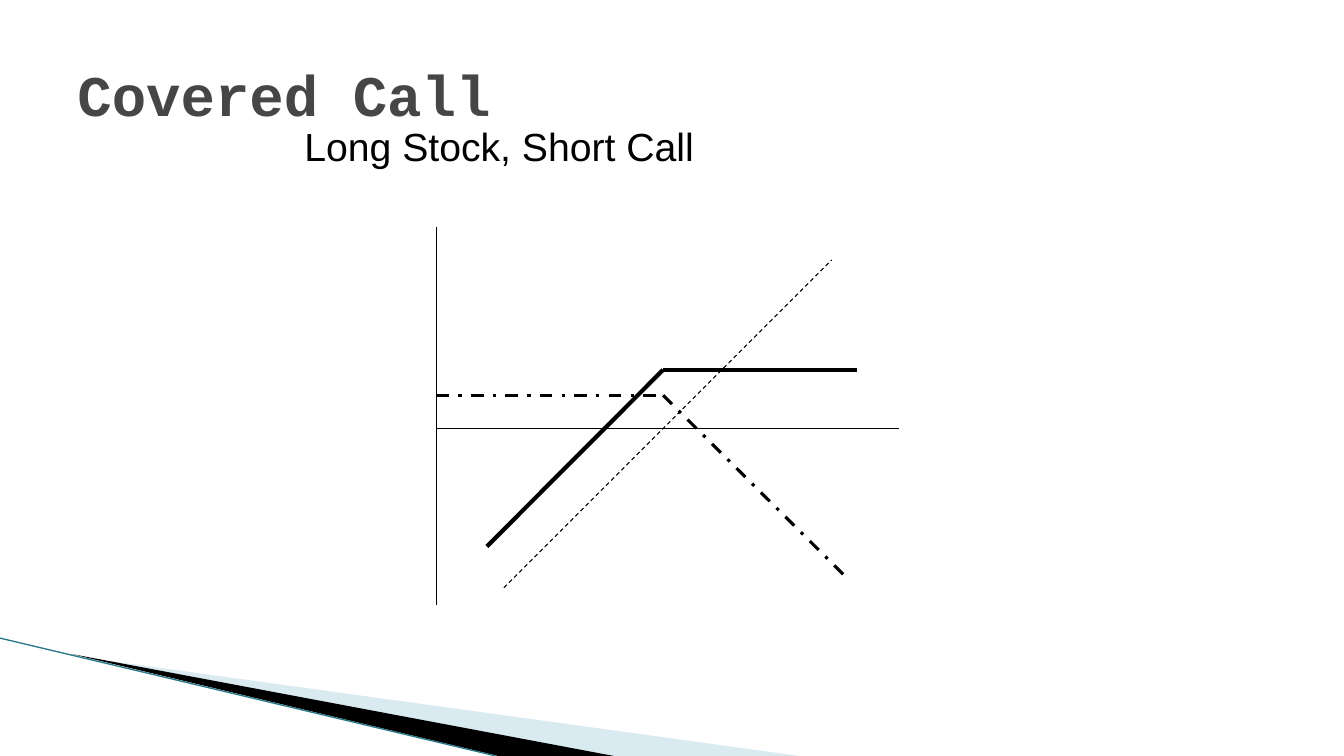
from lxml.etree import SubElement
from pptx import Presentation
from pptx.dml.color import RGBColor
from pptx.enum.dml import MSO_LINE
from pptx.enum.shapes import MSO_CONNECTOR
from pptx.enum.text import MSO_ANCHOR
from pptx.oxml.ns import qn
from pptx.util import Cm, Pt

# Content, lengths in cm
WIDE, HIGH = 33.87, 19.05
LEFT, ZERO, STRIKE = 11, 10.8, 16.71   # axes and strike price
CALL, CAP = 9.96, 9.32                 # heights of the flat parts

# points, colour, opacity in percent
WEDGES = [
    ([(1.85, 16.53), (20.14, HIGH), (15.44, HIGH)], "A0CBDC", 40),
    ([(1.8, 16.48), (15.47, HIGH), (12.55, HIGH)], "000000", 100),
]
EDGE = ([(0, 16.08), (12.5, HIGH)], "2A7A8C", 0.95, None)

# points, colour, width, dash
PLOTS = [
    ([(LEFT, 5.72), (LEFT, 15.24)], "000000", 0.75, None),
    ([(LEFT, ZERO), (22.66, ZERO)], "000000", 0.75, None),
    ([(12.7, 14.81), (20.96, 6.55)], "000000", 0.75, MSO_LINE.DASH),
    ([(LEFT, CALL), (STRIKE, CALL), (21.39, 14.61)],
     "000000", 2.25, MSO_LINE.DASH_DOT),
    ([(12.27, 13.77), (STRIKE, CAP), (21.59, CAP)], "000000", 3, None),
]

# text, box, font, size, colour, bold, anchor
TEXTS = [
    ("Covered Call", (1.7, 0.76, 30.48, 3.18),
     "Courier New", 41, "464646", True, MSO_ANCHOR.MIDDLE),
    ("Long Stock, Short Call", (7.42, 2.97, 19.89, 1.45),
     "Arial", 28, "000000", False, MSO_ANCHOR.TOP),
]

deck = Presentation()
deck.slide_width, deck.slide_height = Cm(WIDE), Cm(HIGH)
slide = deck.slides.add_slide(deck.slide_layouts[6])
shapes = slide.shapes


def paint(item, code):
    item.solid()
    item.fore_color.rgb = RGBColor.from_string(code)


def wedge(points, code, alpha):
    spots = [(Cm(x), Cm(y)) for x, y in points]
    form = shapes.build_freeform(*spots[0])
    form.add_line_segments(spots[1:], close=True)
    shape = form.convert_to_shape()
    shape.shadow.inherit = False
    paint(shape.fill, code)
    shape.line.fill.background()
    if alpha < 100:
        tint = shape.fill._xPr.find(".//" + qn("a:srgbClr"))
        SubElement(tint, qn("a:alpha"), val=str(alpha * 1000))


def plot(points, code, width, dash):
    for start, end in zip(points, points[1:]):
        line = shapes.add_connector(
            MSO_CONNECTOR.STRAIGHT, *map(Cm, start + end))
        paint(line.line.fill, code)
        line.line.width = Pt(width)
        if dash:
            line.line.dash_style = dash
        SubElement(line._element.spPr, qn("a:effectLst"))


def write(text, box, face, size, code, bold, anchor):
    frame = shapes.add_textbox(*map(Cm, box)).text_frame
    frame.word_wrap = True
    frame.vertical_anchor = anchor
    run = frame.paragraphs[0].add_run()
    run.text = text
    font = run.font
    font.name, font.size, font.bold = face, Pt(size), bold
    paint(font.fill, code)


# Corner decoration
for item in WEDGES:
    wedge(*item)
plot(*EDGE)

# Headings
for item in TEXTS:
    write(*item)

# Payoff diagram
for item in PLOTS:
    plot(*item)

deck.save("out.pptx")
